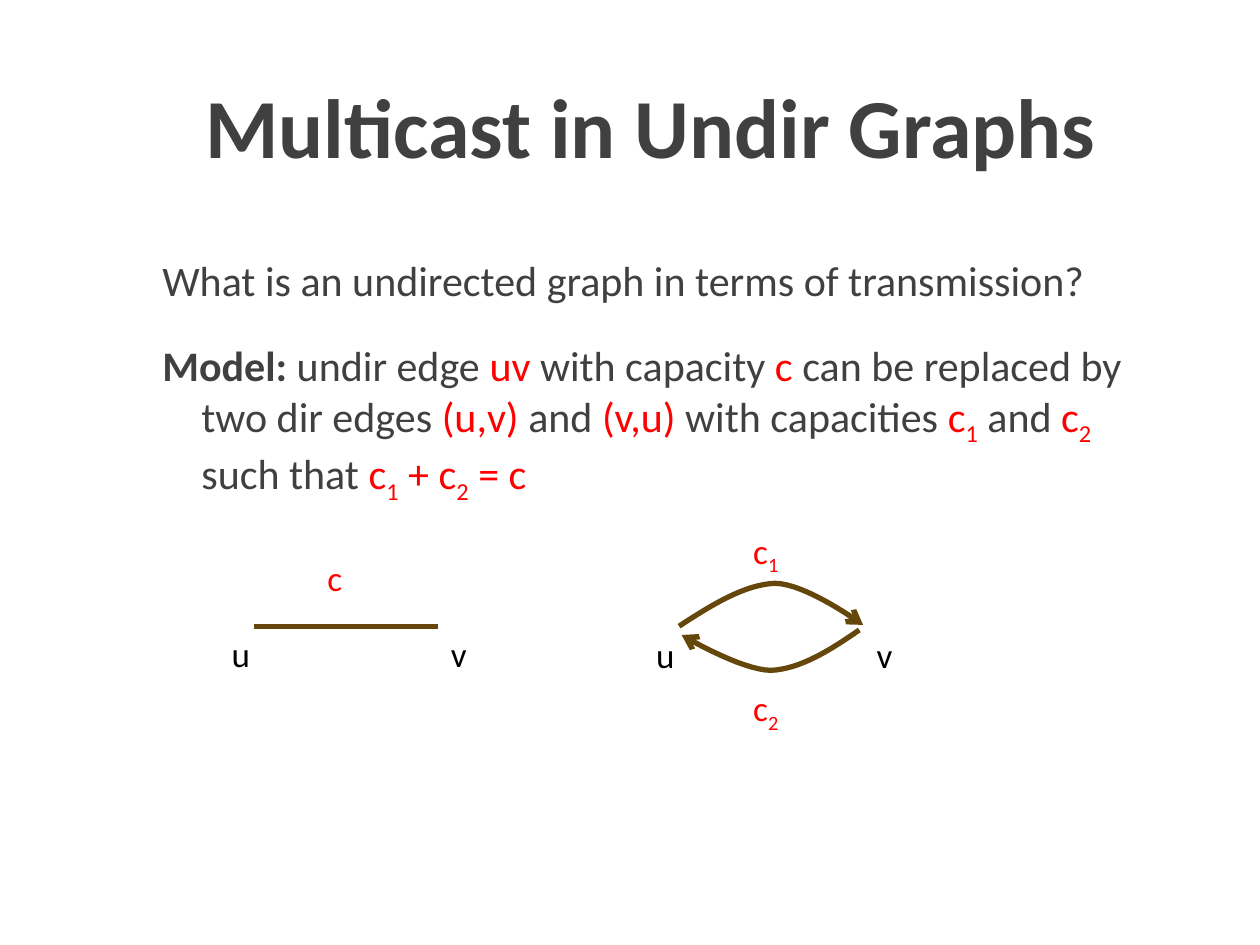
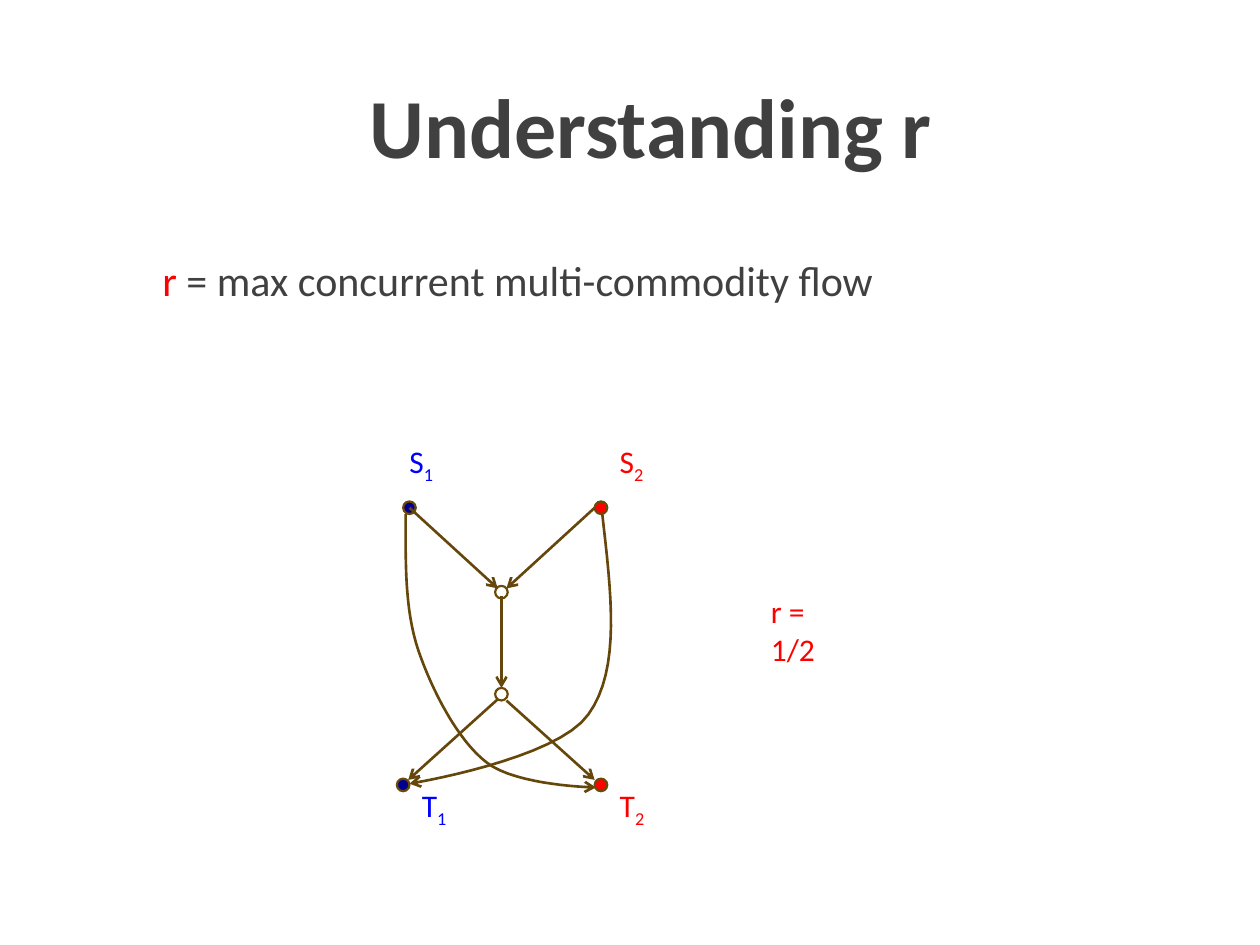
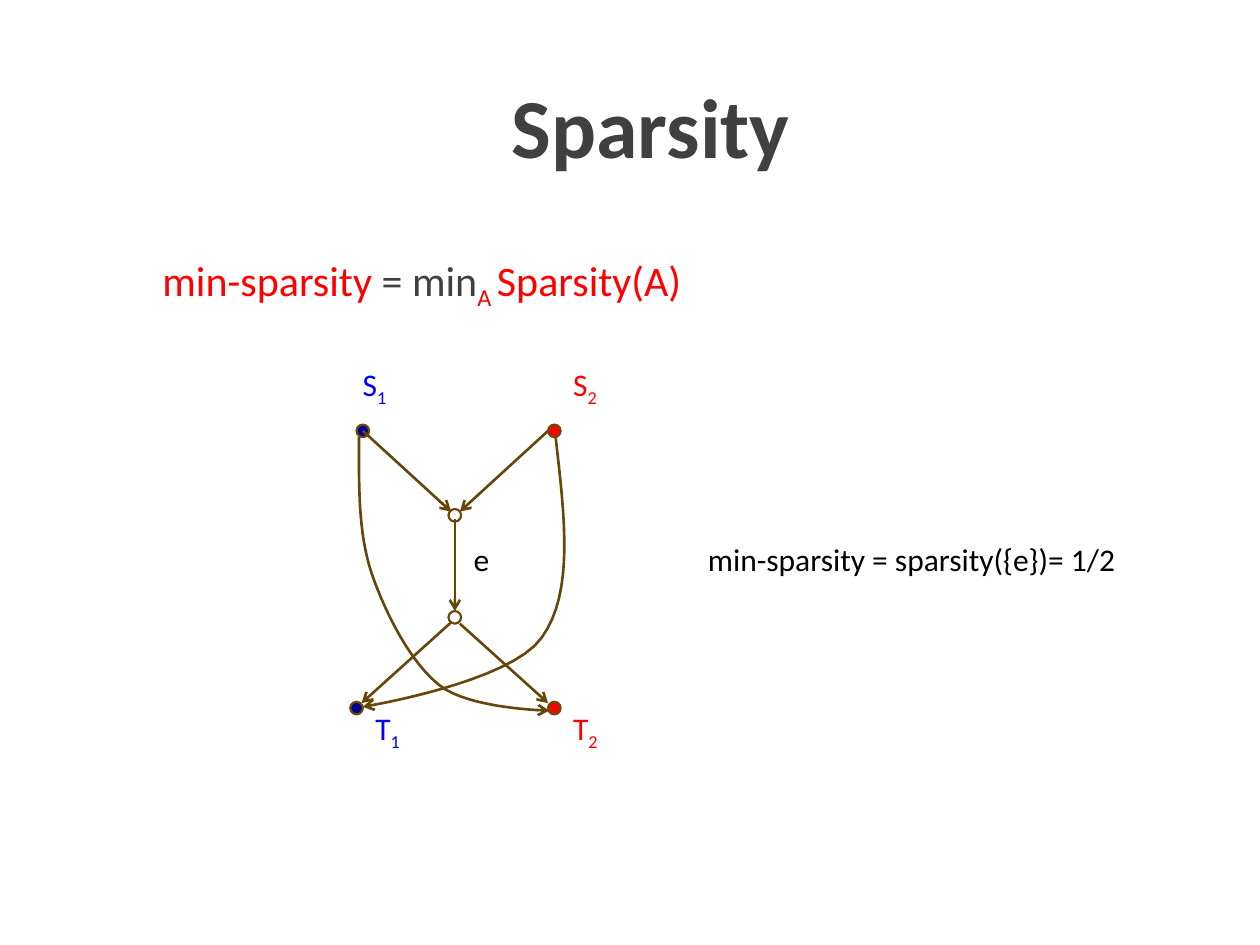
from dataclasses import dataclass
from typing import NamedTuple, Optional

import pptx
import pptx.dml.color
import pptx.enum.shapes
import pptx.enum.text
import pptx.oxml.ns
import pptx.util
from lxml import etree
from pptx.util import Inches

COLORS = {
    "background": "FFFFFF",
    "text": "404040",
    "label": "000000",
    "accent": "FF0000",
    "first": "0000FF",
    "first_node": "000090",
    "edge": "66470B",
    "node_line": "6B4908",
}
FONT = "Calibri"
TITLE_BOX = (1.19, 0.3, 7.95, 1.46)
BODY_BOX = (1.19, 1.97, 7.95, 4.73)
NODE_SIZE = 0.1
CURVE_STEPS = 16

Point = tuple[float, float]


class Span(NamedTuple):
    text: str
    color: str = "text"
    bold: bool = False
    subscript: bool = False


class Node(NamedTuple):
    left: float
    top: float
    fill: Optional[str] = None


@dataclass(frozen=True)
class Label:
    left: float
    top: float
    width: float
    text: str
    color: str = "label"
    index: str = ""
    size: int = 18
    height: float = 0.4


def accent(text: str) -> Span:
    return Span(text, "accent")


def accent_index(text: str) -> Span:
    return Span(text, "accent", subscript=True)


NODES = [
    Node(4.72, 3.98, "accent"),
    Node(3.93, 5.46),
    Node(3.93, 4.65),
    Node(3.15, 6.18, "first_node"),
    Node(3.2, 3.98, "first_node"),
    Node(4.72, 6.18, "accent"),
]
EDGES = [
    ((3.98, 4.73), (3.98, 5.46)),
    ((3.95, 5.55), (3.24, 6.19)),
    ((4.02, 5.56), (4.72, 6.19)),
    ((3.25, 4.03), (3.95, 4.67)),
    ((4.72, 4.03), (4.02, 4.67)),
]
TERMINALS = [
    Label(3.15, 3.46, 0.52, "S", "first", "1"),
    Label(4.82, 3.46, 0.52, "S", "accent", "2"),
    Label(3.25, 6.19, 0.52, "T", "first", "1"),
    Label(4.82, 6.19, 0.52, "T", "accent", "2"),
]
# Each curve is a start point followed by cubic Bézier triples.
SIDE_ROUTES = [
    [(3.22, 4.08), (3.22, 4.45), (3.21, 4.83), (3.32, 5.16), (3.43, 5.48),
     (3.63, 5.87), (3.86, 6.05), (4.1, 6.24), (4.73, 6.25), (4.73, 6.25)],
    [(4.78, 4.08), (4.85, 4.7), (4.93, 5.31), (4.67, 5.67), (4.42, 6.03),
     (3.25, 6.22), (3.25, 6.22)],
]
DIRECTED_PAIR = [
    [(5.39, 4.97), (5.65, 4.8), (5.91, 4.64), (6.15, 4.63), (6.4, 4.63),
     (6.85, 4.96), (6.85, 4.96)],
    [(6.82, 5), (6.59, 5.16), (6.35, 5.31), (6.12, 5.32), (5.88, 5.32),
     (5.41, 5.04), (5.41, 5.04)],
]
CAPACITY_LABELS = [
    Label(left, top, 0.57, text, color, index, 20, 0.44)
    for left, top, text, color, index in [
        (1.74, 4.97, "u", "label", ""),
        (3.48, 4.97, "v", "label", ""),
        (2.5, 4.37, "c", "accent", ""),
        (5.11, 4.98, "u", "label", ""),
        (6.86, 4.98, "v", "label", ""),
        (5.88, 4.15, "c", "accent", "1"),
        (5.88, 5.4, "c", "accent", "2"),
    ]
]
MODEL_BODY = [
    [Span("What is an undirected graph in terms of transmission?")],
    [
        Span("Model: ", bold=True), Span("undir edge "), accent("uv"),
        Span(" with capacity "), accent("c"),
        Span(" can be replaced by two dir edges "), accent("(u,v)"),
        Span(" and "), accent("(v,u)"), Span(" with capacities "),
        accent("c"), accent_index("1"), Span(" and "),
        accent("c"), accent_index("2"), Span(" such that "),
        accent("c"), accent_index("1"), accent(" + c"), accent_index("2"),
        accent(" = c"),
    ],
]


def rgb(name: str) -> pptx.dml.color.RGBColor:
    return pptx.dml.color.RGBColor.from_string(COLORS[name])


def write(paragraph, text: str, *, size: int, color: str = "text",
          bold: bool = False, subscript: bool = False) -> None:
    run = paragraph.add_run()
    run.text = text
    run.font.name = FONT
    run.font.size = pptx.util.Pt(size)
    run.font.bold = bold
    run.font.color.rgb = rgb(color)
    if subscript:
        run._r.get_or_add_rPr().set("baseline", "-25000")


def style_stroke(line, width: float, arrow: bool) -> None:
    line.color.rgb = rgb("edge")
    line.width = pptx.util.Pt(width)
    if arrow:
        outline = line._get_or_add_ln()
        etree.SubElement(outline, pptx.oxml.ns.qn("a:tailEnd"), type="arrow")


def draw_edge(shapes, start: Point, end: Point, width: float = 1.5,
              arrow: bool = True) -> None:
    edge = shapes.add_connector(pptx.enum.shapes.MSO_CONNECTOR.STRAIGHT,
                                *map(Inches, start + end))
    style_stroke(edge.line, width, arrow)
    etree.SubElement(edge._element.spPr, pptx.oxml.ns.qn("a:effectLst"))


def bezier(t: float, controls: list[Point]) -> Point:
    weights = ((1 - t) ** 3, 3 * t * (1 - t) ** 2, 3 * t * t * (1 - t), t ** 3)
    x, y = (sum(w * c for w, c in zip(weights, axis)) for axis in zip(*controls))
    return x, y


def draw_curve(shapes, controls: list[Point], width: float = 1.5) -> None:
    points = [bezier(step / CURVE_STEPS, controls[first:first + 4])
              for first in range(0, len(controls) - 1, 3)
              for step in range(1, CURVE_STEPS + 1)]
    outline = shapes.build_freeform(*map(Inches, controls[0]))
    outline.add_line_segments([(Inches(x), Inches(y)) for x, y in points], close=False)
    curve = outline.convert_to_shape()
    curve.shadow.inherit = False
    curve.fill.background()
    style_stroke(curve.line, width, arrow=True)


def draw_node(shapes, node: Node, dx: float, dy: float) -> None:
    circle = shapes.add_shape(
        pptx.enum.shapes.MSO_SHAPE.OVAL, Inches(node.left + dx),
        Inches(node.top + dy), Inches(NODE_SIZE), Inches(NODE_SIZE))
    circle.shadow.inherit = False
    circle.line.color.rgb = rgb("node_line")
    circle.line.width = pptx.util.Pt(1.25)
    if node.fill:
        circle.fill.solid()
        circle.fill.fore_color.rgb = rgb(node.fill)
    else:
        circle.fill.background()


def draw_label(shapes, label: Label, dx: float = 0, dy: float = 0) -> None:
    box = shapes.add_textbox(Inches(label.left + dx), Inches(label.top + dy),
                             Inches(label.width), Inches(label.height))
    frame = box.text_frame
    frame.word_wrap = True
    frame.auto_size = pptx.enum.text.MSO_AUTO_SIZE.SHAPE_TO_FIT_TEXT
    paragraph = frame.paragraphs[0]
    write(paragraph, label.text, size=label.size, color=label.color)
    if label.index:
        write(paragraph, label.index, size=label.size, color=label.color,
              subscript=True)


def draw_network(slide, dx: float = 0, dy: float = 0,
                 extra_labels: tuple[Label, ...] = ()) -> None:
    """Draw the two-source, two-sink network, shifted by dx and dy."""
    def shift(point: Point) -> Point:
        return point[0] + dx, point[1] + dy

    shapes = slide.shapes.add_group_shape().shapes
    for node in NODES:
        draw_node(shapes, node, dx, dy)
    for start, end in EDGES:
        draw_edge(shapes, shift(start), shift(end))
    for label in (*TERMINALS, *extra_labels):
        draw_label(shapes, label, dx, dy)
    for route in SIDE_ROUTES:
        draw_curve(shapes, [shift(point) for point in route])


def add_slide(deck, heading: str, body: list[list[Span]]):
    slide = deck.slides.add_slide(deck.slide_layouts[5])
    slide.background.fill.solid()
    slide.background.fill.fore_color.rgb = rgb("background")

    title = slide.shapes.title
    title.left, title.top, title.width, title.height = map(Inches, TITLE_BOX)
    title.text_frame.auto_size = pptx.enum.text.MSO_AUTO_SIZE.NONE
    title.text_frame.vertical_anchor = pptx.enum.text.MSO_ANCHOR.MIDDLE
    title_line = title.text_frame.paragraphs[0]
    title_line.alignment = pptx.enum.text.PP_ALIGN.CENTER
    title_line.line_spacing = pptx.util.Pt(52)
    write(title_line, heading, size=48, bold=True)

    frame = slide.shapes.add_textbox(*map(Inches, BODY_BOX)).text_frame
    frame.word_wrap = True
    for number, spans in enumerate(body):
        paragraph = frame.add_paragraph() if number else frame.paragraphs[0]
        if number:
            paragraph.space_before = pptx.util.Pt(20)
        properties = paragraph._p.get_or_add_pPr()
        properties.set("marL", str(Inches(0.31)))
        properties.set("indent", str(Inches(-0.31)))
        for span in spans:
            write(paragraph, span.text, size=24, color=span.color,
                  bold=span.bold, subscript=span.subscript)
    return slide


def add_model_slide(deck) -> None:
    slide = add_slide(deck, "Multicast in Undir Graphs", MODEL_BODY)
    draw_edge(slide.shapes, (2.02, 4.97), (3.48, 4.97), width=3, arrow=False)
    for label in CAPACITY_LABELS:
        draw_label(slide.shapes, label)
    for route in DIRECTED_PAIR:
        draw_curve(slide.shapes, route, width=3)


def add_flow_slide(deck) -> None:
    slide = add_slide(deck, "Understanding r", [
        [accent("r"), Span(" = max concurrent multi-commodity flow")]])
    draw_network(slide)
    draw_label(slide.shapes, Label(6.02, 4.65, 0.8, "r = 1/2", "accent"))


def add_sparsity_slide(deck) -> None:
    slide = add_slide(deck, "Sparsity", [
        [accent("min-sparsity "), Span("= min"), accent_index("A "),
         accent("Sparsity(A)")]])
    draw_network(slide, -0.37, -0.61, (Label(4.03, 4.85, 0.59, "e"),))
    draw_label(slide.shapes,
               Label(5.52, 4.24, 3.62, "min-sparsity = sparsity({e})= 1/2"))


def main() -> None:
    deck = pptx.Presentation()
    deck.slide_width, deck.slide_height = Inches(10), Inches(7.5)
    add_model_slide(deck)
    add_flow_slide(deck)
    add_sparsity_slide(deck)
    deck.save("out.pptx")


if __name__ == "__main__":
    main()
